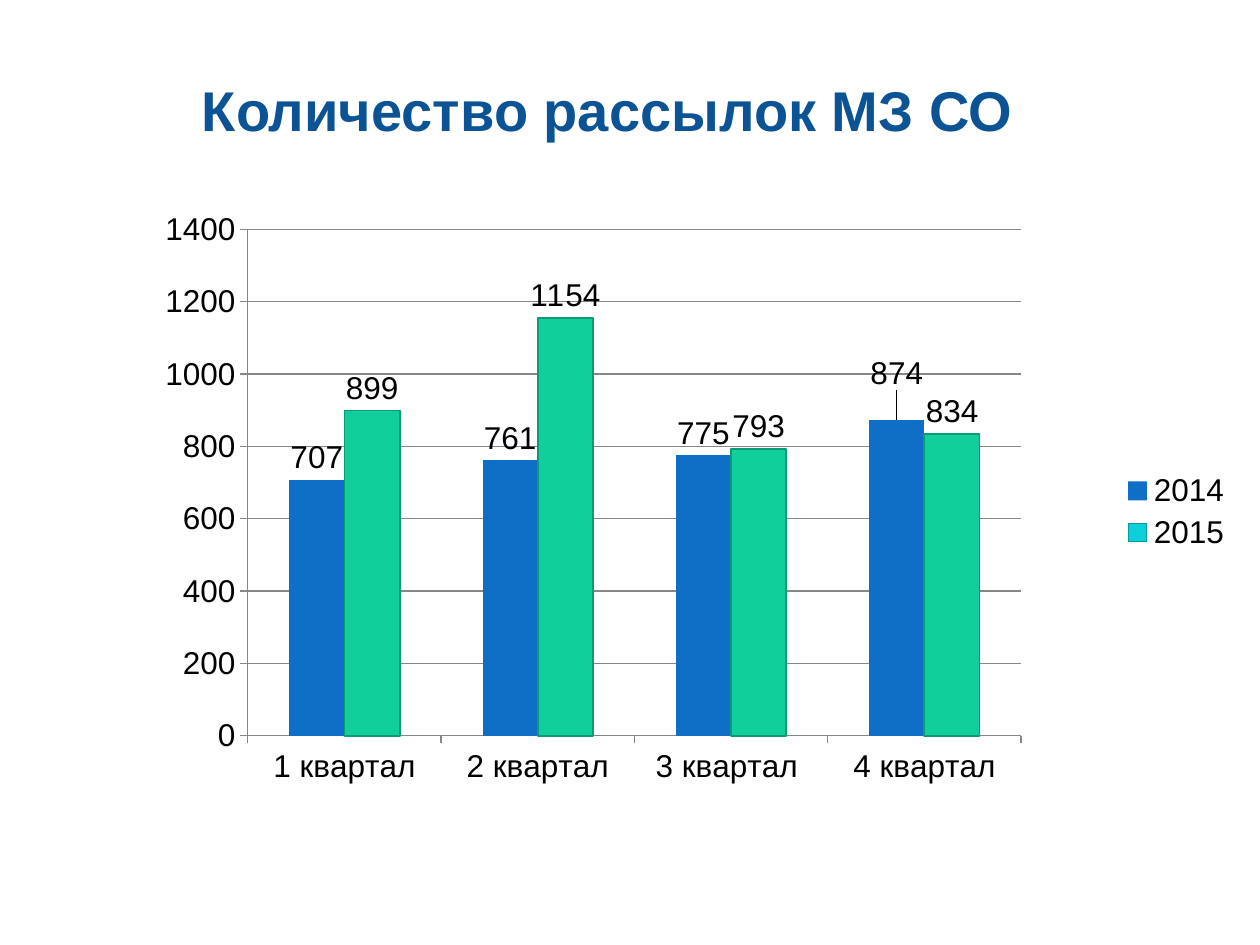
import pptx
import pptx.chart.data
import pptx.dml.color
import pptx.enum.chart
import pptx.enum.text
import pptx.oxml
import pptx.oxml.ns
import pptx.util
from pptx.util import Inches

COLORS = {
    "background": "FFFFFF",
    "title": "0B5394",
    "text": "000000",
    "axis": "878787",
    "2014": "0F6FC6",
    "2015": "0BD0D9",
    "2015 line": "089AA1",
    "2015 bar": "10CF9B",
    "2015 bar line": "0C9B74",
}
QUARTERS = ["1 квартал", "2 квартал", "3 квартал ", "4 квартал"]
MAILINGS = {"2014": [707, 761, 775, 874], "2015": [899, 1154, 793, 834]}


def manual_layout(**values):
    items = "".join(f'<c:{tag} val="{value}"/>' for tag, value in values.items())
    return pptx.oxml.parse_xml(
        f'<c:layout {pptx.oxml.ns.nsdecls("c")}>'
        f"<c:manualLayout>{items}</c:manualLayout></c:layout>"
    )


class SlideBuilder:
    font = "Arial"

    def __init__(self, slide):
        self.slide = slide
        slide.background.fill.solid()
        slide.background.fill.fore_color.rgb = self.color("background")

    def color(self, name):
        return pptx.dml.color.RGBColor.from_string(COLORS[name])

    def style_font(self, font, size, color, bold=False):
        font.name = self.font
        font.size = pptx.util.Pt(size)
        font.bold = bold
        font.color.rgb = self.color(color)

    def paint(self, fmt, fill, line=None):
        fmt.fill.solid()
        fmt.fill.fore_color.rgb = self.color(fill)
        if line:
            fmt.line.color.rgb = self.color(line)
            fmt.line.width = pptx.util.Pt(1)
        else:
            fmt.line.fill.background()

    def title(self, text, left, top, width, height):
        box = self.slide.shapes.add_textbox(
            Inches(left), Inches(top), Inches(width), Inches(height))
        tf = box.text_frame
        tf.word_wrap = True
        tf.vertical_anchor = pptx.enum.text.MSO_ANCHOR.MIDDLE
        p = tf.paragraphs[0]
        p.alignment = pptx.enum.text.PP_ALIGN.CENTER
        p.line_spacing = 0.9
        r = p.add_run()
        r.text = text
        self.style_font(r.font, 32, "title", bold=True)

    def column_chart(self, categories, series, left, top, width, height):
        data = pptx.chart.data.CategoryChartData()
        data.categories = categories
        for name, values in series.items():
            data.add_series(name, values)
        chart = self.slide.shapes.add_chart(
            pptx.enum.chart.XL_CHART_TYPE.COLUMN_CLUSTERED,
            Inches(left), Inches(top), Inches(width), Inches(height), data).chart
        self.style_font(chart.font, 18, "text")
        chart.has_title = False
        chart.has_legend = True
        chart.legend.position = pptx.enum.chart.XL_LEGEND_POSITION.RIGHT
        chart.legend.include_in_layout = False

        # Axes and gridlines
        value_axis = chart.value_axis
        value_axis.minimum_scale, value_axis.maximum_scale = 0, 1400
        value_axis.major_unit = 200
        value_axis.has_major_gridlines = True
        for part in (chart.category_axis, value_axis, value_axis.major_gridlines):
            part.format.line.color.rgb = self.color("axis")
            part.format.line.width = pptx.util.Pt(0.75)
        for axis in (chart.category_axis, value_axis):
            axis.major_tick_mark = pptx.enum.chart.XL_TICK_MARK.OUTSIDE

        # Columns and their labels
        plot = chart.plots[0]
        plot.gap_width = 150
        plot.overlap = 0
        plot.vary_by_categories = False
        for s in plot.series:
            s.invert_if_negative = False
            labels = s.data_labels
            labels.show_value = True
            labels.position = pptx.enum.chart.XL_LABEL_POSITION.OUTSIDE_END
            self.style_font(labels.font, 18, "text")
        return chart

    def place_plot(self, chart, x, y, w, h):
        area = chart.plots[0]._element.getparent()
        for old in area.findall(pptx.oxml.ns.qn("c:layout")):
            area.remove(old)
        area.insert(0, manual_layout(
            layoutTarget="inner", xMode="edge", yMode="edge", x=x, y=y, w=w, h=h))

    def shift_label(self, series, index, dx, dy):
        label = series.points[index].data_label
        self.style_font(label.font, 18, "text")
        label.position = pptx.enum.chart.XL_LABEL_POSITION.OUTSIDE_END
        d_lbl = label.font._element.getparent()
        while d_lbl.tag != pptx.oxml.ns.qn("c:dLbl"):
            d_lbl = d_lbl.getparent()
        d_lbl.insert(1, manual_layout(x=dx, y=dy))


def main():
    prs = pptx.Presentation()
    prs.slide_width, prs.slide_height = Inches(10), Inches(7.5)
    builder = SlideBuilder(prs.slides.add_slide(prs.slide_layouts[6]))

    # Mailings per quarter
    chart = builder.column_chart(QUARTERS, MAILINGS, 1.26, 1.68, 8.62, 4.76)
    builder.place_plot(chart, 0.082, 0.029, 0.712, 0.845)
    first, second = chart.plots[0].series
    builder.paint(first.format, "2014")
    builder.paint(second.format, "2015", "2015 line")
    for i in range(len(QUARTERS)):
        builder.paint(second.points[i].format, "2015 bar", "2015 bar line")
    builder.shift_label(first, 3, 0, -0.04)

    # Heading
    builder.title("Количество рассылок МЗ СО", 0.57, 0.3, 8.5, 1.2)

    prs.save("out.pptx")


if __name__ == "__main__":
    main()
